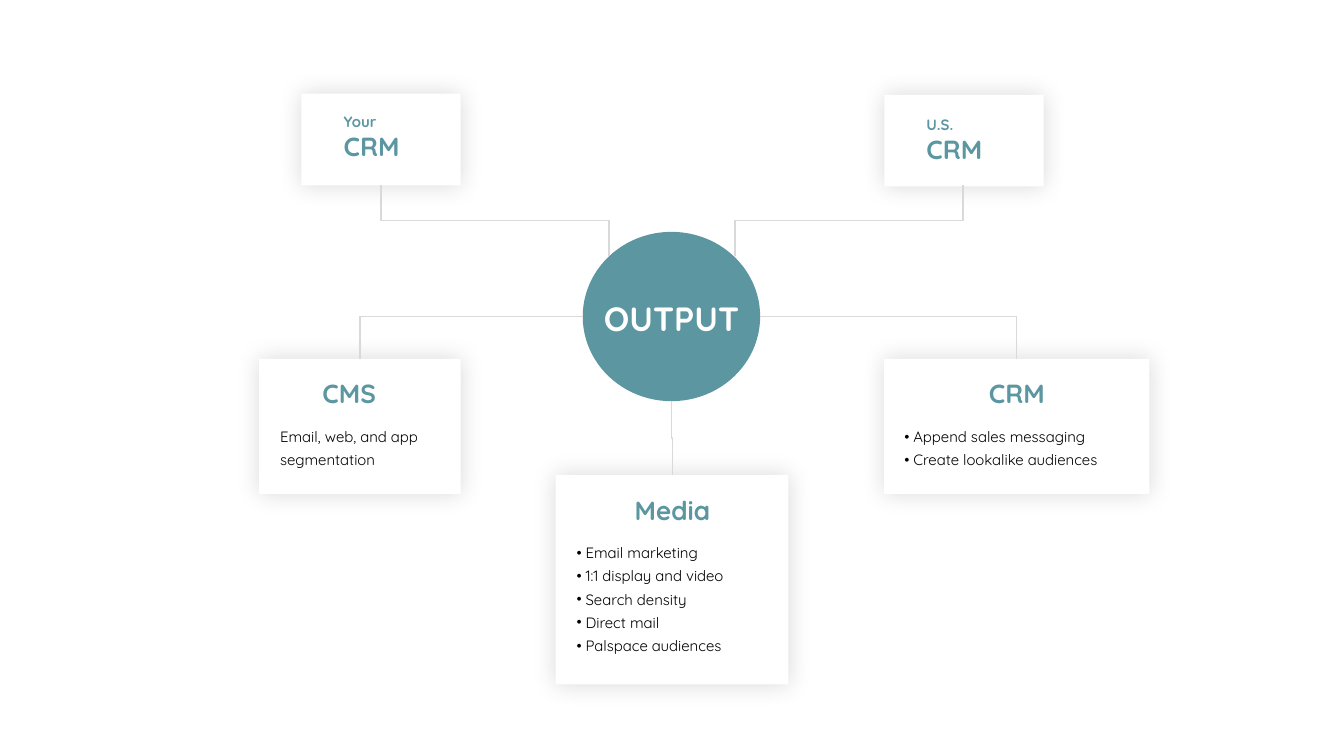
from dataclasses import dataclass
from typing import Optional

from lxml.etree import SubElement
from pptx import Presentation
from pptx.dml.color import RGBColor as Rgb
from pptx.enum.shapes import MSO_CONNECTOR as Link, MSO_SHAPE as Preset
from pptx.enum.text import MSO_AUTO_SIZE as Fit, PP_ALIGN as Align
from pptx.oxml.ns import qn
from pptx.util import Inches, Pt


@dataclass(frozen=True)
class Theme:
    font: str = "Quicksand"
    teal: Rgb = Rgb(0x5B, 0x96, 0xA1)
    white: Rgb = Rgb(0xFF, 0xFF, 0xFF)
    black: Rgb = Rgb(0, 0, 0)
    grey: Rgb = Rgb(0xD9, 0xD9, 0xD9)
    hub_size: float = 24
    title_size: float = 18.7
    body_size: float = 10.7
    body_spacing: float = 1.3
    bullet_indent: float = 0.09
    shadow_blur: float = 17
    shadow_alpha: int = 15


@dataclass(frozen=True)
class Box:
    left: float
    top: float
    width: float
    height: float

    def lengths(self) -> list:
        return [Inches(v) for v in (self.left, self.top, self.width, self.height)]


@dataclass(frozen=True)
class Line:
    text: str
    size: float
    color: Rgb
    bold: bool = False
    spacing: Optional[float] = None
    bullet: bool = False
    align: Optional[Align] = None


@dataclass(frozen=True)
class Card:
    frame: Box
    title: str
    title_box: Box
    kicker: str = ""
    body: tuple = ()
    body_box: Optional[Box] = None
    centered: bool = False
    bulleted: bool = False


@dataclass(frozen=True)
class Branch:
    """An elbow that leaves its start vertically."""
    start: tuple
    end: tuple
    preset: str


THEME = Theme()
HUB = Box(5.78, 2.3, 1.76, 1.68)

CARDS = (
    Card(Box(2.99, 0.93, 1.58, 0.91), "CRM", Box(3.31, 1.07, 0.94, 0.59), kicker="Your"),
    Card(Box(8.77, 0.94, 1.58, 0.91), "CRM", Box(9.09, 1.1, 0.94, 0.59), kicker="U.S."),
    Card(Box(2.57, 3.56, 2, 1.34), "CMS", Box(3.1, 3.69, 0.94, 0.42),
         body=("Email, web, and app", "segmentation"),
         body_box=Box(2.68, 4.14, 1.79, 0.54)),
    Card(Box(8.77, 3.56, 2.63, 1.34), "CRM", Box(8.77, 3.69, 2.63, 0.42),
         body=("Append sales messaging", "Create lookalike audiences"),
         body_box=Box(8.87, 4.14, 2.42, 0.54), centered=True, bulleted=True),
    Card(Box(5.51, 4.71, 2.31, 2.08), "Media", Box(5.67, 4.85, 2, 0.42),
         body=("Email marketing", "1:1 display and video", "Search density",
               "Direct mail", "Palspace audiences"),
         body_box=Box(5.62, 5.29, 2.1, 1.24), centered=True, bulleted=True),
)

BRANCHES = (
    Branch((3.78, 1.84), (6.04, 2.54), "bentConnector3"),
    Branch((9.55, 1.84), (7.29, 2.54), "bentConnector3"),
    Branch((3.57, 3.56), (5.78, 3.14), "bentConnector2"),
    Branch((10.08, 3.56), (7.54, 3.14), "bentConnector2"),
    Branch((6.67, 4.71), (6.66, 3.98), "bentConnector3"),
)


def apply_format(target, values: dict) -> None:
    for name, value in values.items():
        setattr(target, name, value)


def draw_panel(slide, preset: Preset, box: Box, color: Rgb):
    panel = slide.shapes.add_shape(preset, *box.lengths())
    panel.shadow.inherit = False
    panel.fill.solid()
    panel.fill.fore_color.rgb = color
    panel.line.fill.background()
    return panel


def add_glow(panel) -> None:
    """Soft even shadow around a card."""
    effects = panel._element.spPr.find(qn("a:effectLst"))
    shadow = SubElement(effects, qn("a:outerShdw"),
                        blurRad=str(Pt(THEME.shadow_blur)), dist="0",
                        algn="ctr", rotWithShape="0")
    tint = SubElement(shadow, qn("a:srgbClr"), val=str(THEME.black))
    SubElement(tint, qn("a:alpha"), val=str(THEME.shadow_alpha * 1000))


def add_bullet(paragraph) -> None:
    indent = Inches(THEME.bullet_indent)
    props = paragraph._p.get_or_add_pPr()
    props.set("marL", str(indent))
    props.set("indent", str(-indent))
    SubElement(props, qn("a:buFont"), typeface=THEME.font)
    SubElement(props, qn("a:buChar"), char="•")


def write_lines(slide, box: Box, lines: list) -> None:
    frame = slide.shapes.add_textbox(*box.lengths()).text_frame
    apply_format(frame, {"word_wrap": True, "auto_size": Fit.SHAPE_TO_FIT_TEXT})
    for index, line in enumerate(lines):
        paragraph = frame.add_paragraph() if index else frame.paragraphs[0]
        apply_format(paragraph, {"alignment": line.align, "line_spacing": line.spacing})
        if line.bullet:
            add_bullet(paragraph)
        run = paragraph.add_run()
        run.text = line.text
        apply_format(run.font, {"name": THEME.font, "size": Pt(line.size),
                                "bold": line.bold})
        run.font.color.rgb = line.color


def draw_card(slide, card: Card) -> None:
    add_glow(draw_panel(slide, Preset.RECTANGLE, card.frame, THEME.white))
    align = Align.CENTER if card.centered else None
    heading = [Line(card.title, THEME.title_size, THEME.teal, bold=True, align=align)]
    if card.kicker:
        heading.insert(0, Line(card.kicker, THEME.body_size, THEME.teal, bold=True))
    write_lines(slide, card.title_box, heading)
    if card.body_box:
        write_lines(slide, card.body_box, [
            Line(text, THEME.body_size, THEME.black,
                 spacing=THEME.body_spacing, bullet=card.bulleted)
            for text in card.body])


def draw_branch(slide, branch: Branch) -> None:
    (x1, y1), (x2, y2) = branch.start, branch.end
    # A quarter turn swaps the two spans around the shared centre
    mid_x, mid_y = (x1 + x2) / 2, (y1 + y2) / 2
    half_w, half_h = abs(y2 - y1) / 2, abs(x2 - x1) / 2
    elbow = slide.shapes.add_connector(
        Link.ELBOW, Inches(mid_x - half_w), Inches(mid_y - half_h),
        Inches(mid_x + half_w), Inches(mid_y + half_h))
    elbow.line.color.rgb = THEME.grey
    elbow.line.width = Pt(1)
    props = elbow._element.spPr
    turn = {"rot": str(90 * 60000), "flipH": str(int(y2 < y1)), "flipV": str(int(x2 > x1))}
    for name, value in turn.items():
        props.find(qn("a:xfrm")).set(name, value)
    props.find(qn("a:prstGeom")).set("prst", branch.preset)
    SubElement(props, qn("a:effectLst"))


def main() -> None:
    deck = Presentation()
    apply_format(deck, {"slide_width": Inches(13.33), "slide_height": Inches(7.5)})
    slide = deck.slides.add_slide(deck.slide_layouts[6])

    # Central hub
    draw_panel(slide, Preset.OVAL, HUB, THEME.teal)
    write_lines(slide, Box(HUB.left, 2.91, HUB.width, 0.5),
                [Line("OUTPUT", THEME.hub_size, THEME.white, bold=True, align=Align.CENTER)])

    # Cards around the hub
    for card in CARDS:
        draw_card(slide, card)

    # Branches from cards to hub
    for branch in BRANCHES:
        draw_branch(slide, branch)

    deck.save("out.pptx")


if __name__ == "__main__":
    main()
